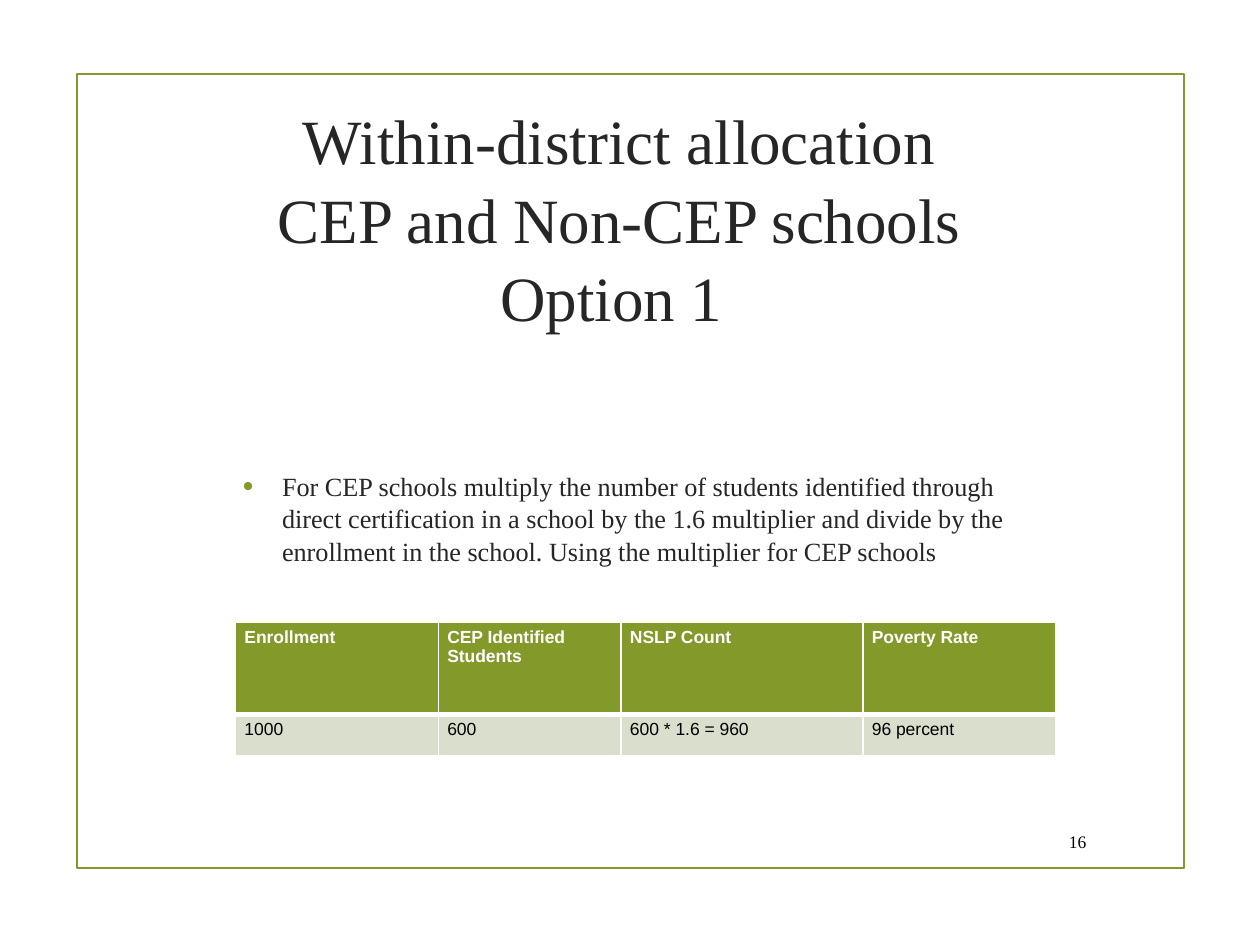
from dataclasses import dataclass

from lxml.etree import SubElement
from pptx import Presentation
from pptx.dml.color import RGBColor
from pptx.enum.shapes import MSO_SHAPE
from pptx.enum.text import MSO_ANCHOR, PP_ALIGN
from pptx.oxml import parse_xml
from pptx.oxml.ns import nsdecls, qn
from pptx.slide import Slide
from pptx.table import _Cell
from pptx.text.text import _Paragraph
from pptx.util import Inches, Pt

GREEN = RGBColor(0x83, 0x99, 0x2A)
PALE_GREEN = RGBColor(0xD9, 0xDE, 0xCD)
CHARCOAL = RGBColor(0x26, 0x26, 0x26)
BLACK = RGBColor(0, 0, 0)
WHITE = RGBColor(0xFF, 0xFF, 0xFF)
SERIF = "Times New Roman"
SANS = "Arial"


@dataclass(frozen=True)
class TextBlock:
    text: str
    bounds: tuple[float, float, float, float]
    size: float
    color: RGBColor
    alignment: PP_ALIGN = PP_ALIGN.LEFT
    anchor: MSO_ANCHOR = MSO_ANCHOR.MIDDLE
    line_spacing: float = 1.0
    bulleted: bool = False


@dataclass(frozen=True)
class TableRow:
    height: float
    texts: tuple[str, ...]
    fill: RGBColor
    color: RGBColor
    bold: bool
    borders: dict[str, float]


TEXT_BLOCKS = (
    TextBlock(
        "Within-district allocation\vCEP and Non-CEP schools\vOption 1 ",
        (1.08, 1.25, 7.67, 0.94), 36, CHARCOAL, PP_ALIGN.CENTER, line_spacing=1.04,
    ),
    TextBlock(
        "For CEP schools multiply the number of students identified through direct "
        "certification in a school by the 1.6 multiplier and divide by the enrollment "
        "in the school. Using the multiplier for CEP schools",
        (1.83, 3.67, 6.28, 1.27), 15, CHARCOAL,
        anchor=MSO_ANCHOR.TOP, line_spacing=1.04, bulleted=True,
    ),
    TextBlock("16", (8.29, 6.52, 0.43, 0.31), 10, BLACK, PP_ALIGN.RIGHT),
)
COLUMN_WIDTHS = (1.61, 1.45, 1.92, 1.53)
TABLE_ROWS = (
    TableRow(
        0.73, ("Enrollment", "CEP Identified Students", "NSLP Count", "Poverty Rate"),
        GREEN, WHITE, True, {"lnL": 1, "lnR": 1, "lnT": 1, "lnB": 3},
    ),
    TableRow(
        0.33, ("1000", "600", "600 * 1.6 = 960", "96 percent"),
        PALE_GREEN, BLACK, False, {"lnL": 1, "lnR": 1, "lnT": 3, "lnB": 1},
    ),
)


def apply_format(target: object, values: dict[str, object]) -> None:
    for name, value in values.items():
        setattr(target, name, value)


def format_font(paragraph: _Paragraph, name: str, size: float, color: RGBColor, bold: bool = False) -> None:
    for run in paragraph.runs:
        apply_format(run.font, {"name": name, "size": Pt(size), "bold": bold})
        run.font.color.rgb = color


def add_bullet(paragraph: _Paragraph) -> None:
    properties = paragraph._p.get_or_add_pPr()
    properties.set("marL", str(Inches(0.31)))
    properties.set("indent", str(-Inches(0.31)))
    bullet_color = SubElement(properties, qn("a:buClr"))
    SubElement(bullet_color, qn("a:srgbClr"), val=str(GREEN))
    SubElement(properties, qn("a:buSzPct"), val="115000")
    SubElement(properties, qn("a:buFont"), typeface=SANS)
    SubElement(properties, qn("a:buChar"), char="•")


def add_text(slide: Slide, block: TextBlock) -> None:
    shape = slide.shapes.add_textbox(*map(Inches, block.bounds))
    frame = shape.text_frame
    apply_format(frame, {"word_wrap": True, "vertical_anchor": block.anchor})
    paragraph = frame.paragraphs[0]
    paragraph.text = block.text
    if block.bulleted:
        add_bullet(paragraph)
    apply_format(paragraph, {"alignment": block.alignment, "line_spacing": block.line_spacing})
    format_font(paragraph, SERIF, block.size, block.color)


def add_borders(cell: _Cell, borders: dict[str, float]) -> None:
    properties = cell._tc.get_or_add_tcPr()
    for position, (edge, width) in enumerate(borders.items()):
        border = parse_xml(
            f'<a:{edge} {nsdecls("a")} w="{Pt(width)}"><a:solidFill>'
            f'<a:srgbClr val="{WHITE}"/></a:solidFill></a:{edge}>'
        )
        properties.insert(position, border)


def fill_cell(cell: _Cell, text: str, row: TableRow) -> None:
    apply_format(cell, {
        "text": text,
        "margin_left": Inches(0.07),
        "margin_right": Inches(0.07),
        "margin_top": Inches(0.04),
        "margin_bottom": Inches(0.04),
    })
    cell.fill.solid()
    cell.fill.fore_color.rgb = row.fill
    format_font(cell.text_frame.paragraphs[0], SANS, 10, row.color, row.bold)
    add_borders(cell, row.borders)


def add_poverty_table(slide: Slide) -> None:
    width = sum(COLUMN_WIDTHS)
    height = sum(row.height for row in TABLE_ROWS)
    table = slide.shapes.add_table(
        len(TABLE_ROWS), len(COLUMN_WIDTHS),
        Inches(1.87), Inches(4.94), Inches(width), Inches(height),
    ).table
    for column, column_width in zip(table.columns, COLUMN_WIDTHS):
        column.width = Inches(column_width)
    for row_index, row in enumerate(TABLE_ROWS):
        table.rows[row_index].height = Inches(row.height)
        for column_index, text in enumerate(row.texts):
            fill_cell(table.cell(row_index, column_index), text, row)


def add_frame(slide: Slide) -> None:
    shape = slide.shapes.add_shape(
        MSO_SHAPE.RECTANGLE, Inches(0.61), Inches(0.59), Inches(8.79), Inches(6.3)
    )
    shape.shadow.inherit = False
    shape.fill.background()
    shape.line.color.rgb = GREEN
    shape.line.width = Pt(1.25)


def main() -> None:
    presentation = Presentation()
    apply_format(presentation, {"slide_width": Inches(10), "slide_height": Inches(7.5)})
    slide = presentation.slides.add_slide(presentation.slide_layouts[6])
    add_frame(slide)
    for block in TEXT_BLOCKS:
        add_text(slide, block)
    add_poverty_table(slide)
    presentation.save("out.pptx")


if __name__ == "__main__":
    main()
